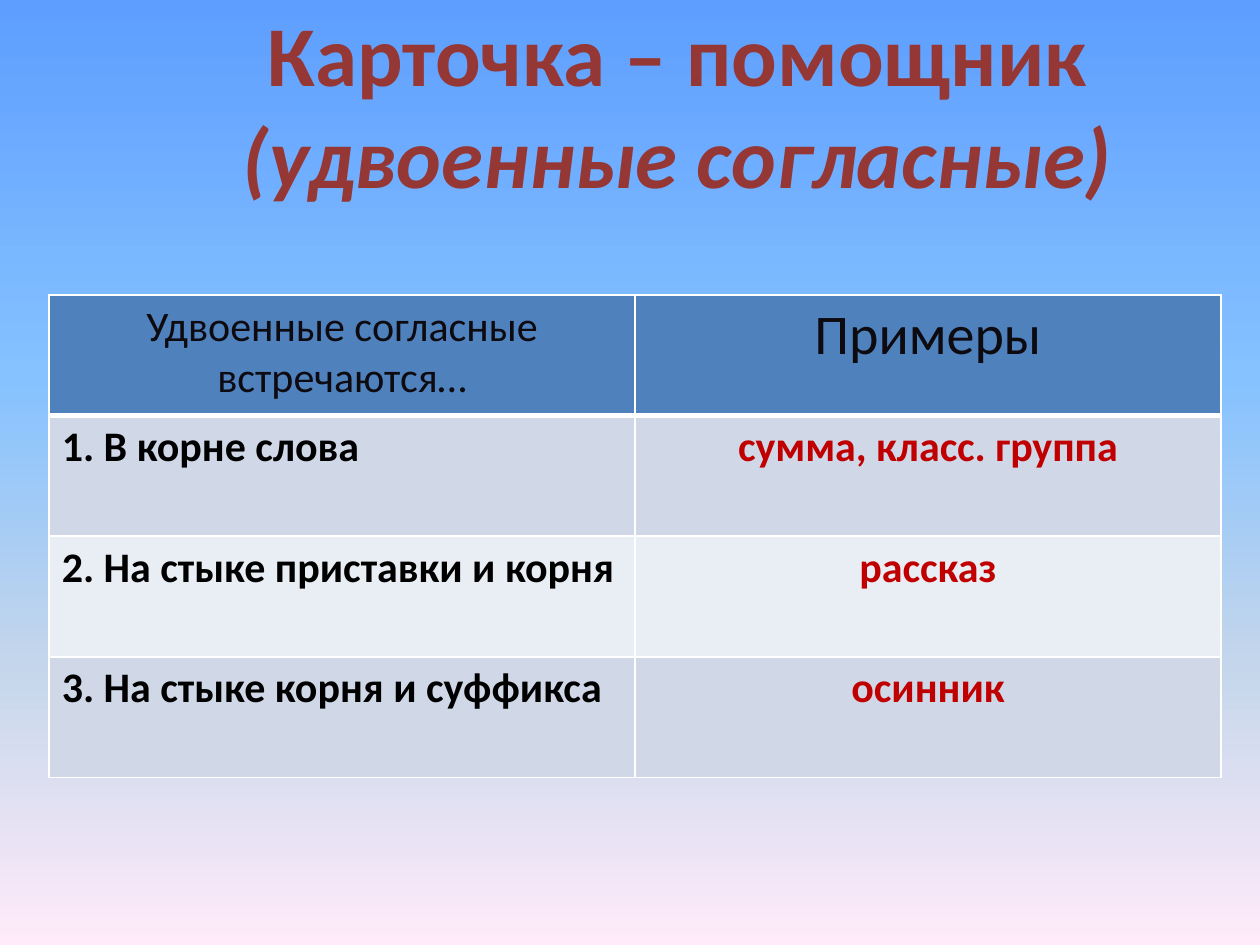
from copy import deepcopy
from lxml.etree import SubElement as Sub
from pptx import Presentation
from pptx.dml.color import RGBColor
from pptx.enum.text import MSO_ANCHOR as Anchor, MSO_AUTO_SIZE as Fit, PP_ALIGN as Align
from pptx.oxml.ns import qn
from pptx.util import Inches, Pt

TITLE = ["Карточка – помощник", "(удвоенные согласные)"]
HEAD = [("Удвоенные согласные встречаются…", 24), ("Примеры", 32)]
ROWS = [
    ("1. В корне слова", "сумма, класс. группа"),
    ("2. На стыке приставки и корня", "рассказ"),
    ("3. На стыке корня и суффикса", "осинник"),
]
INKS = ["000000", "C00000"]
BANDS = ["D0D8E8", "E9EDF4"]
STOPS = [(0, "5E9EFF"), (0.4, "85C2FF"), (0.7, "C4D6EB"), (1, "FFEBFA")]


def rgb(code):
    """Turn a hex string into a colour."""
    return RGBColor.from_string(code)


def style(font, size, ink, bold):
    """Set the look of a font."""
    font.name, font.size, font.bold = "Calibri", Pt(size), bold
    font.color.rgb = rgb(ink)


def paint(slide):
    """Fill the background with the gradient."""
    fill = slide.background.fill
    fill.gradient()
    fill.gradient_angle = 270
    stops = slide.element.find(".//" + qn("a:gsLst"))
    while len(stops) < len(STOPS):
        stops.append(deepcopy(stops[0]))
    for stop, (place, code) in zip(fill.gradient_stops, STOPS):
        stop.position = place
        stop.color.rgb = rgb(code)


def edge(cell, base):
    """Draw white borders round a cell."""
    props = cell._tc.get_or_add_tcPr()
    for side, width in zip("LRTB", (1, 1, 1, base)):
        line = Sub(props, qn("a:ln" + side), w=str(Pt(width)))
        Sub(Sub(line, qn("a:solidFill")), qn("a:srgbClr"), val="FFFFFF")


def put(cell, text, size, ink, bold, back, align, base=1):
    """Write and format one table cell."""
    edge(cell, base)
    cell.fill.solid()
    cell.fill.fore_color.rgb = rgb(back)
    cell.text_frame.text = text
    para = cell.text_frame.paragraphs[0]
    para.alignment = align
    style(para.runs[0].font, size, ink, bold)


def head(slide):
    """Place and format the title."""
    title = slide.shapes.title
    title.left, title.top = Inches(0.75), Inches(0)
    title.width, title.height = Inches(9.25), Inches(1.64)
    frame = title.text_frame
    frame.text = "\v".join(TITLE)
    frame.auto_size, frame.word_wrap = Fit.NONE, True
    frame.vertical_anchor = Anchor.MIDDLE
    frame.margin_top = frame.margin_bottom = 0
    para = frame.paragraphs[0]
    para.alignment = Align.CENTER
    for run in para.runs:
        style(run.font, 48.6, "953735", True)
    para.runs[1].font.italic = True


def grid(slide):
    """Build the table of rules and examples."""
    table = slide.shapes.add_table(
        len(ROWS) + 1, len(HEAD), Inches(0.39), Inches(2.34), Inches(9.3), Inches(3.83)
    ).table
    for col, (text, size) in enumerate(HEAD):
        put(table.cell(0, col), text, size, "0D0A10", False, "4F81BD", Align.CENTER, 3)
    for row, texts in enumerate(ROWS):
        for col, text in enumerate(texts):
            align = Align.CENTER if col else Align.LEFT
            put(table.cell(row + 1, col), text, 24, INKS[col], True, BANDS[row % 2], align)


def main():
    """Build and save the slide."""
    deck = Presentation()
    deck.slide_width, deck.slide_height = Inches(10), Inches(7.5)
    slide = deck.slides.add_slide(deck.slide_layouts[5])
    paint(slide)
    head(slide)
    grid(slide)
    deck.save("out.pptx")


if __name__ == "__main__":
    main()
